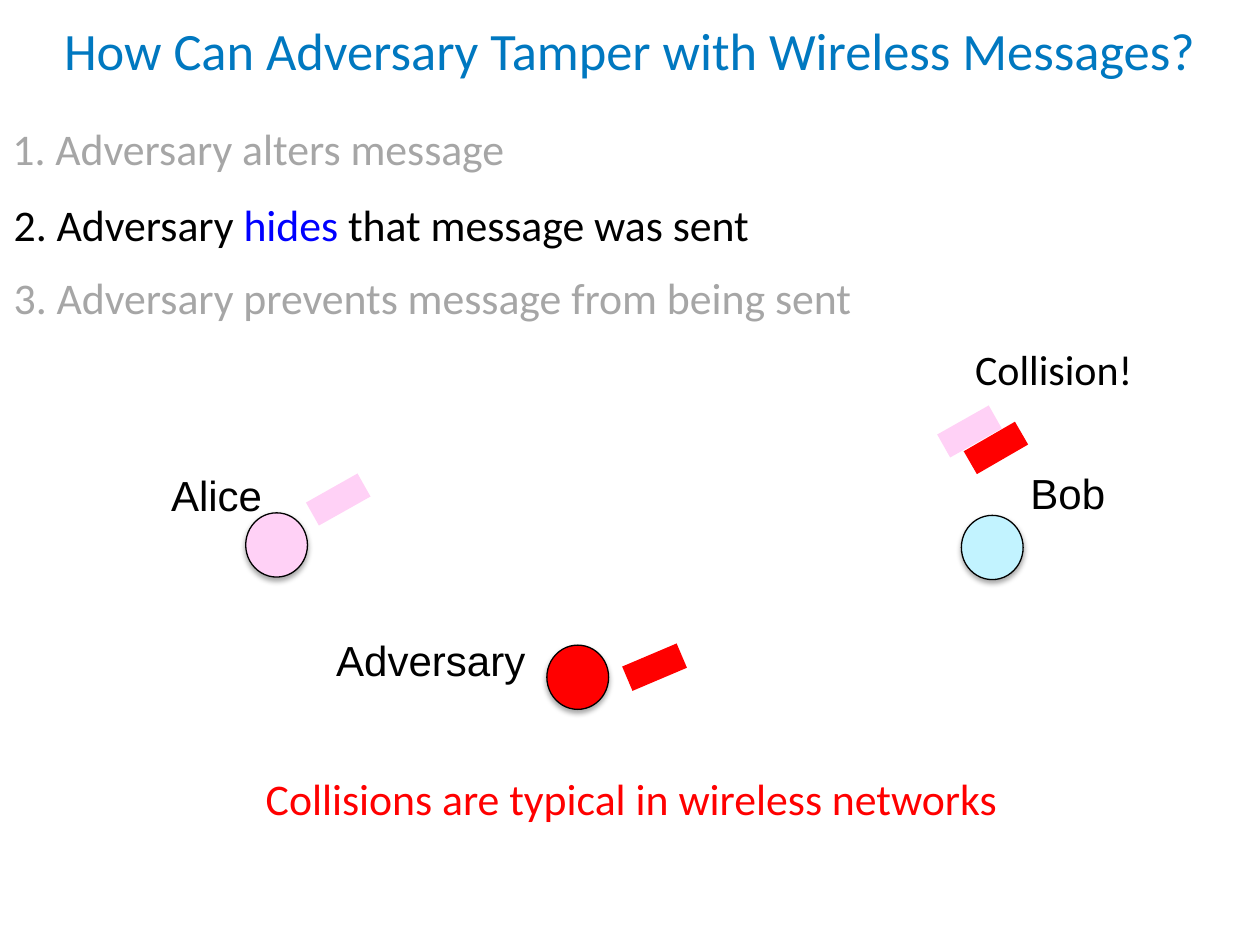
from lxml.etree import SubElement
from pptx import Presentation
from pptx.dml.color import RGBColor
from pptx.enum.shapes import MSO_SHAPE as SHAPE
from pptx.enum.text import MSO_ANCHOR as ANCHOR, PP_ALIGN as ALIGN
from pptx.oxml.ns import qn
from pptx.util import Inches, Pt

COLORS = {
    "title": "0078C0", "faded": "A6A6A6", "text": "000000", "accent": "0000FF",
    "alice": "FFD1F6", "bob": "C2F3FF", "adversary": "FF0000",
}


def add_text(box, runs, size, font="Calibri", **layout):
    """Add one paragraph of (text, colour name) runs."""
    frame = slide.shapes.add_textbox(*map(Inches, box)).text_frame
    frame.word_wrap = True
    frame.vertical_anchor = layout.get("anchor", ANCHOR.TOP)
    paragraph = frame.paragraphs[0]
    paragraph.alignment = layout.get("align", ALIGN.LEFT)
    for text, color in runs:
        run = paragraph.add_run()
        run.text = text
        run_format = {"name": font, "size": Pt(size)}
        for attribute, value in run_format.items():
            setattr(run.font, attribute, value)
        run.font.color.rgb = RGBColor.from_string(COLORS[color])


def add_filled(shapes, kind, box, color, rotation=0):
    shape = shapes.add_shape(kind, *map(Inches, box))
    shape.fill.solid()
    shape.fill.fore_color.rgb = RGBColor.from_string(COLORS[color])
    shape.line.fill.background()
    shape.shadow.inherit = False
    shape.rotation = rotation
    return shape


deck = Presentation()
deck.slide_width, deck.slide_height = Inches(10), Inches(7.5)
slide = deck.slides.add_slide(deck.slide_layouts[6])

# Title and conclusion
centered = {"anchor": ANCHOR.MIDDLE, "align": ALIGN.CENTER}
add_text((0, -0.01, 10, 0.8),
         [("How Can Adversary Tamper with Wireless Messages?", "title")], 30, **centered)
add_text((0.01, 5.94, 10, 0.79),
         [("Collisions are typical in wireless networks", "adversary")], 25, **centered)

# The three ways to tamper, the second one in focus
ways = [
    ((0, 0.92, 5.02, 0.57), [("1. Adversary alters message", "faded")]),
    ((0.01, 1.52, 6.22, 0.56), [("2. Adversary ", "text"), ("hides ", "accent"),
                                ("that message was sent", "text")]),
    ((0.01, 2.1, 7.18, 0.56), [("3. Adversary prevents message from being sent", "faded")]),
]
for box, runs in ways:
    add_text(box, runs, 25)

# Packets on their way
PACKET = (0.47, 0.21)
add_filled(slide.shapes, SHAPE.RECTANGLE, (2.45, 3.86, *PACKET), "alice", 330.6)
add_filled(slide.shapes, SHAPE.RECTANGLE, (4.96, 5.19, *PACKET), "adversary", 337)

# Colliding packets
collision = slide.shapes.add_group_shape()
add_filled(collision.shapes, SHAPE.RECTANGLE, (7.46, 3.32, *PACKET), "alice", 330.6)
add_filled(collision.shapes, SHAPE.RECTANGLE, (7.67, 3.45, *PACKET), "adversary", 330)
add_text((7.64, 2.68, 1.73, 0.5), [("Collision!", "text")], 24)

# People: a labelled node with a soft shadow below it
people = [
    ("Alice", "alice", (1.95, 4.07), (1.26, 3.68, 1.3, 0.5)),
    ("Bob", "bob", (7.63, 4.09), (8.08, 3.66, 1.3, 0.5)),
    ("Adversary", "adversary", (4.34, 5.12), (2.57, 4.99, 1.75, 0.5)),
]
for name, color, corner, label_box in people:
    node = add_filled(slide.shapes, SHAPE.OVAL, (*corner, 0.49, 0.51), color)
    node.line.color.rgb = RGBColor.from_string(COLORS["text"])
    node.line.width = Pt(0.75)
    effects = node.element.spPr.find(qn("a:effectLst"))
    shadow = SubElement(effects, qn("a:outerShdw"), blurRad=str(Pt(3.1)),
                        dist=str(Pt(1.8)), dir="5400000", rotWithShape="0")
    shade = SubElement(shadow, qn("a:srgbClr"), val=COLORS["text"])
    SubElement(shade, qn("a:alpha"), val="35000")
    add_text(label_box, [(name, "text")], 24, "Arial")

deck.save("out.pptx")
